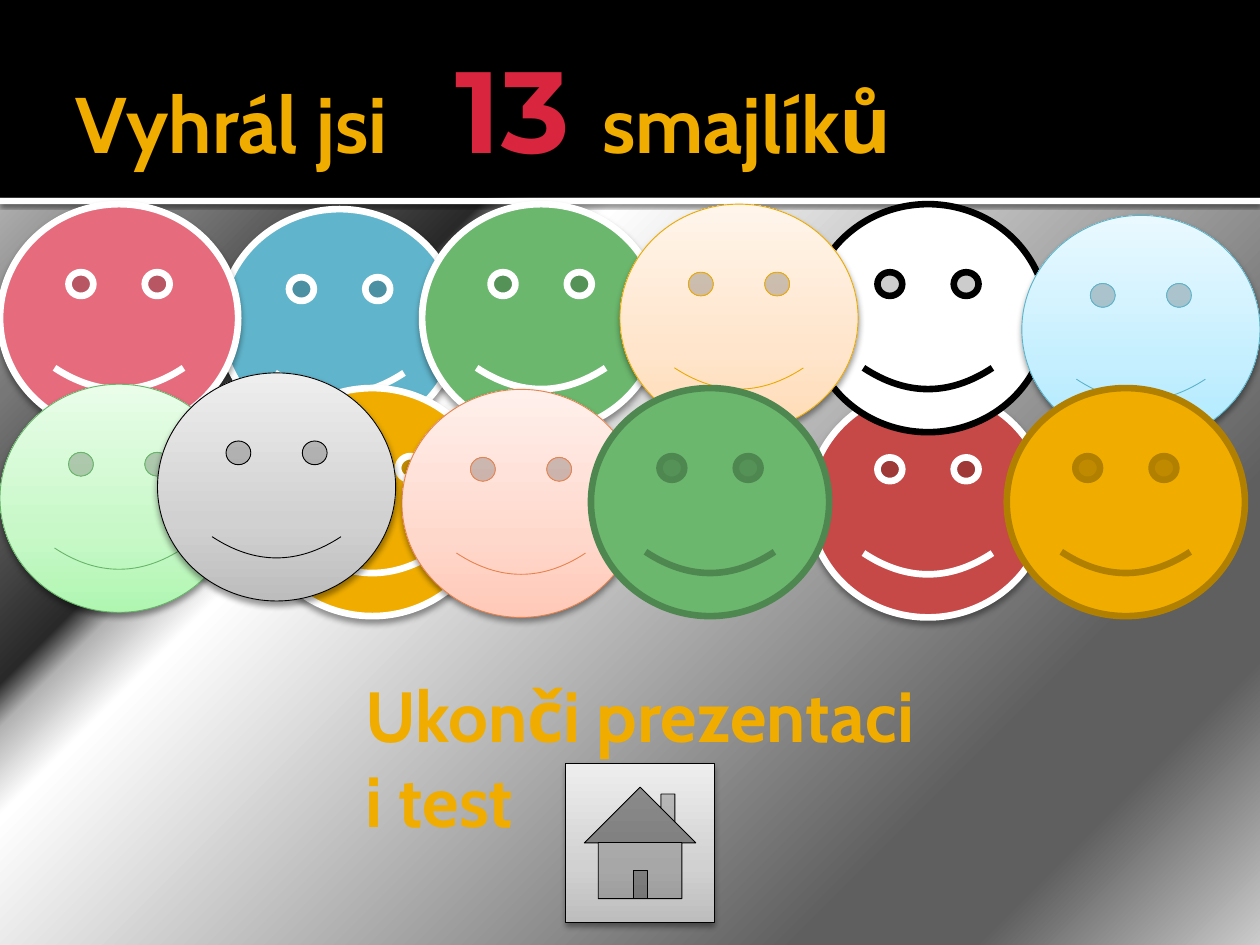
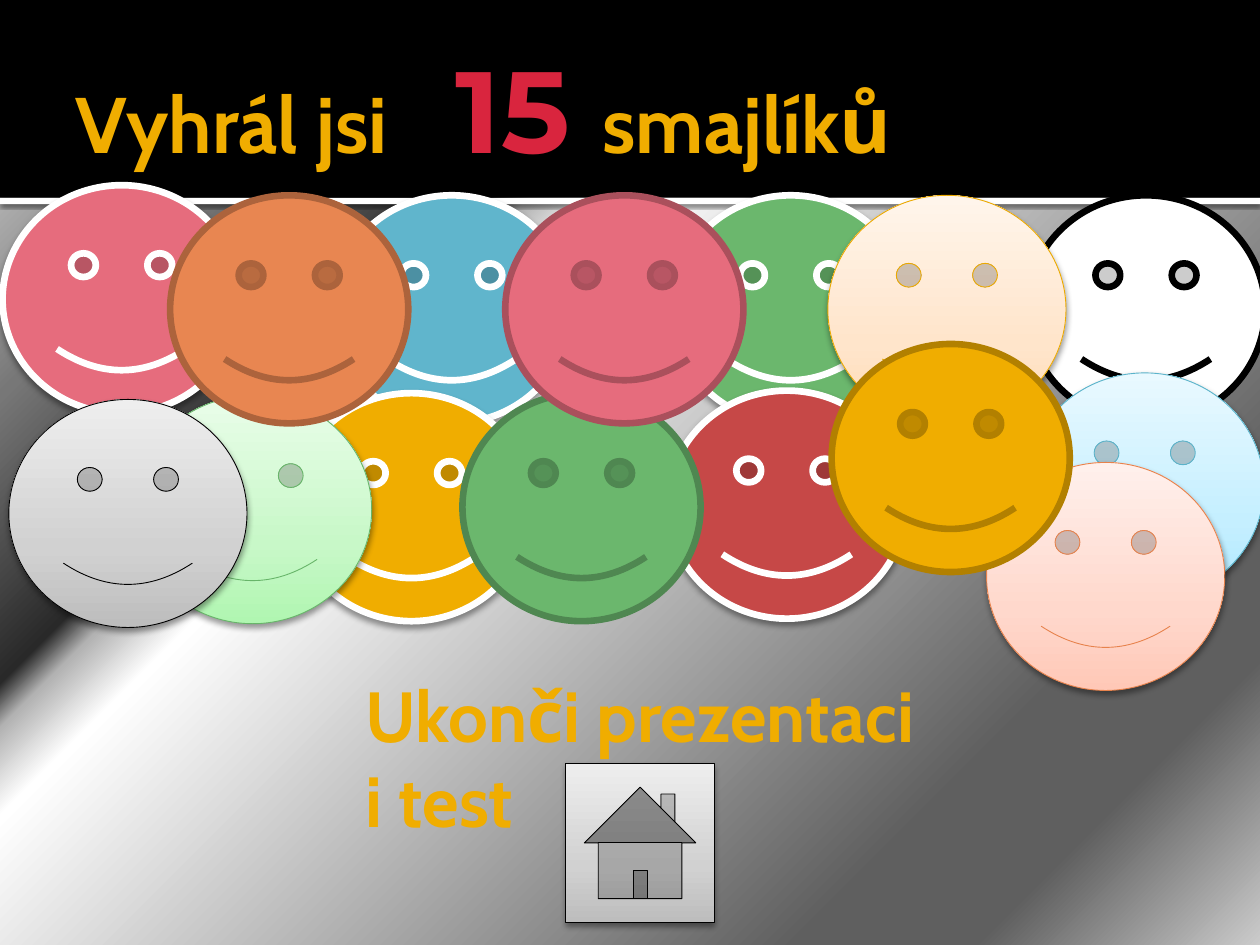
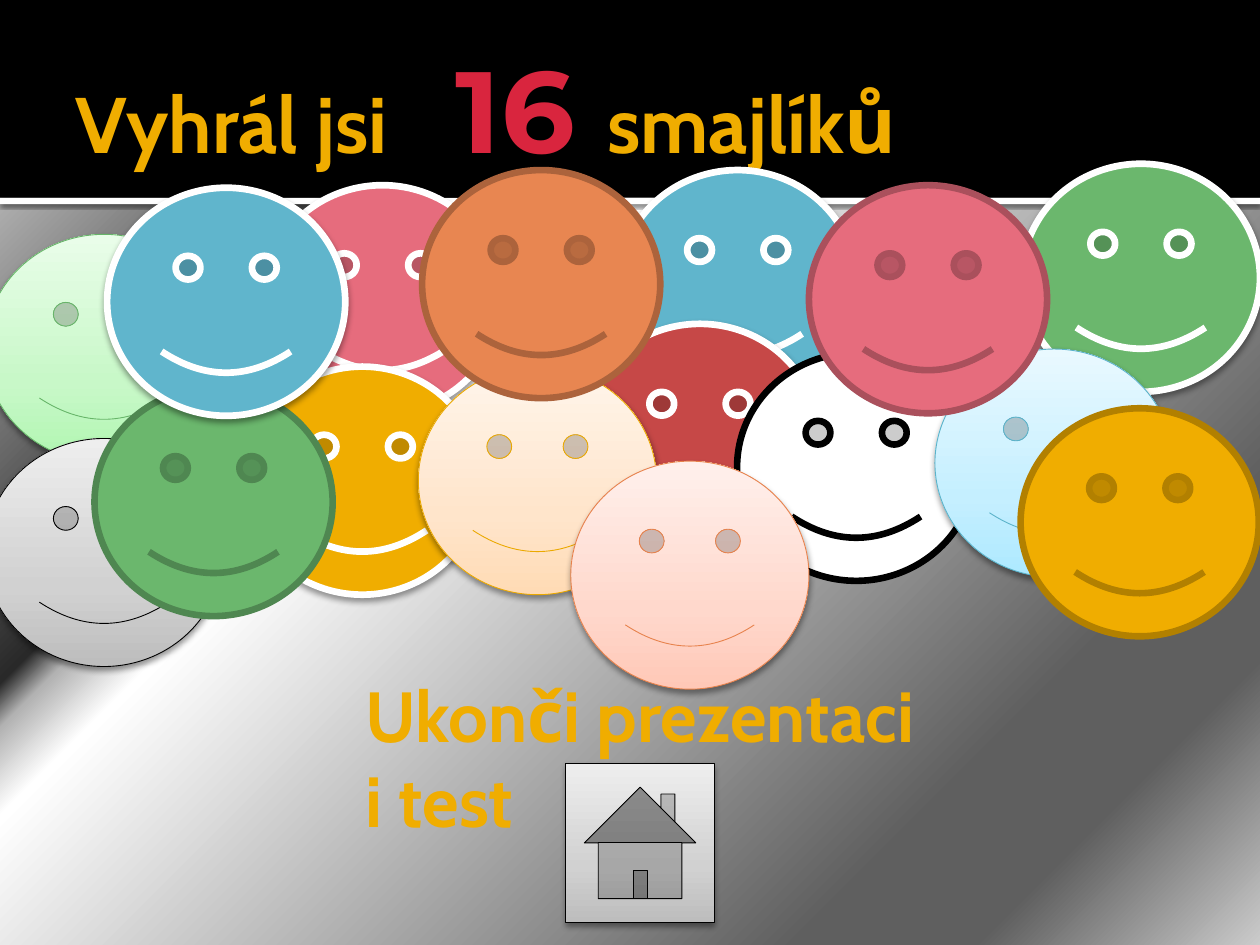
from lxml import etree
from pptx import Presentation
from pptx.dml.color import RGBColor
from pptx.enum.shapes import MSO_SHAPE
from pptx.enum.text import MSO_ANCHOR
from pptx.oxml.ns import qn
from pptx.util import Inches, Pt

RECTANGLE = MSO_SHAPE.RECTANGLE
SMILEY = MSO_SHAPE.SMILEY_FACE
HOME_BUTTON = MSO_SHAPE.ACTION_BUTTON_HOME
MIDDLE = MSO_ANCHOR.MIDDLE
BLANK_LAYOUT = 6

COLORS = {
    "black": "000000", "white": "FFFFFF", "gold": "F0AD00", "score": "D9253E",
    "blue": "60B5CC", "pink": "E66C7D", "green": "6BB76D", "red": "C64847",
    "orange": "E88651", "dark_green": "4F8751", "dark_gold": "B28000",
    "dark_pink": "AA505C", "dark_orange": "AC633C", "green_line": "67B569",
    "gold_line": "EBA900", "blue_line": "5BB3CA", "orange_line": "E7824C",
}
PALE_FILLS = {
    "pale_green": ("B0F6B1", "C8F8C8", "E9FDE9"),
    "pale_gold": ("FFDBB5", "FFE5CB", "FFF5EB"),
    "pale_blue": ("ADE9FF", "C5EFFF", "E9F9FF"),
    "pale_orange": ("FFC8B7", "FFD8CC", "FFF0EC"),
    "pale_gray": ("BDBDBD", "D1D1D1", "EEEEEE"),
}
PALE_STOPS = (0, 35, 100)
BACKGROUND_STOPS = [
    (0, "CBCBCB"), (13, "5F5F5F"), (21, "5F5F5F"), (63, "FFFFFF"),
    (67, "B2B2B2"), (69, "292929"), (82, "777777"), (100, "EAEAEA"),
]

# Opacity in percent, blur and distance in points
SOFT_SHADOW = (38, 3.5, 2)
BAND_SHADOW = (60, 2.5, 0.8)

# Fill, line colour, line width and shadow
OUTLINED = ("white", 3.82, SOFT_SHADOW)
FACES = [
    ("blue", *OUTLINED),
    ("pink", *OUTLINED),
    ("green", *OUTLINED),
    ("gold", *OUTLINED),
    ("red", *OUTLINED),
    ("white", "black", 3.78, None),
    ("pale_green", "green_line", 0.5, SOFT_SHADOW),
    ("pale_gold", "gold_line", 0.5, SOFT_SHADOW),
    ("pale_blue", "blue_line", 0.5, SOFT_SHADOW),
    ("pale_orange", "orange_line", 0.5, SOFT_SHADOW),
    ("pale_gray", "black", 0.5, SOFT_SHADOW),
    ("green", "dark_green", 3.78, None),
    ("gold", "dark_gold", 3.78, None),
    ("pink", "dark_pink", 3.78, None),
    ("orange", "dark_orange", 3.78, None),
    ("blue", *OUTLINED),
]
FACE_SIZE = (1.89, 1.81)

# Left and top of each face, in the order of FACES; their number is the score
RESULTS = [
    [(1.75, 1.66), (0, 1.62), (3.35, 1.62), (2.01, 3.08), (6.42, 3.09),
     (6.42, 1.62), (0, 3.05), (4.92, 1.62), (8.11, 1.71), (3.19, 3.09),
     (1.25, 2.96), (4.69, 3.08), (7.99, 3.08)],
    [(2.64, 1.55), (0.02, 1.47), (5.33, 1.55), (2.32, 3.12), (5.3, 3.1),
     (8.15, 1.55), (1.06, 3.14), (6.57, 1.55), (8.14, 2.96), (7.83, 3.67),
     (0.07, 3.17), (3.67, 3.12), (6.6, 2.73), (4.01, 1.55), (1.35, 1.55)],
    [(4.91, 1.35), (2.09, 1.47), (8.11, 1.3), (1.93, 2.91), (4.61, 2.57),
     (5.85, 2.8), (-0.12, 1.86), (3.32, 2.91), (7.42, 2.77), (4.53, 3.66),
     (-0.12, 3.48), (0.75, 3.08), (8.1, 3.24), (6.42, 1.47), (3.35, 1.35),
     (0.85, 1.49)],
]

PAGE_BOX = (0, 0, 10, 7.5)
HEADER_BOX = (0, 0, 10, 1.57)
EXIT_BOX = (2.8, 5.32, 4.8, 1.37)


def color(name):
    return RGBColor.from_string(COLORS[name])


def add_element(parent, tag, **attributes):
    values = {key: str(value) for key, value in attributes.items()}
    return etree.SubElement(parent, qn(tag), values)


def make_gradient(holder, stops):
    """Replace the solid fill in holder by a gradient and return it."""
    gradient = etree.Element(qn("a:gradFill"), rotWithShape="1")
    stop_list = add_element(gradient, "a:gsLst")
    for percent, value in stops:
        stop = add_element(stop_list, "a:gs", pos=percent * 1000)
        add_element(stop, "a:srgbClr", val=value)
    holder.replace(holder.find(qn("a:solidFill")), gradient)
    return gradient


def paint_background(page):
    page.background.fill.solid()
    holder = page._element.find(".//" + qn("p:bgPr"))
    gradient = make_gradient(holder, BACKGROUND_STOPS)
    circle = add_element(gradient, "a:path", path="circle")
    add_element(circle, "a:fillToRect", l=100000, t=100000)


def add_shadow(shape, opacity, blur, distance):
    effects = shape._element.spPr.find(qn("a:effectLst"))
    shadow = add_element(effects, "a:outerShdw", blurRad=Pt(blur), dist=Pt(distance),
                         dir=5400000, rotWithShape=0)
    tint = add_element(shadow, "a:srgbClr", val=COLORS["black"])
    add_element(tint, "a:alpha", val=opacity * 1000)


def add_figure(page, kind, box, fill, line=None, width=0, shadow=None):
    shape = page.shapes.add_shape(kind, *map(Inches, box))
    shape.shadow.inherit = False
    shape.fill.solid()
    if fill in PALE_FILLS:
        gradient = make_gradient(shape._element.spPr, zip(PALE_STOPS, PALE_FILLS[fill]))
        add_element(gradient, "a:lin", ang=16200000, scaled=1)
    else:
        shape.fill.fore_color.rgb = color(fill)
    if line:
        shape.line.color.rgb = color(line)
        shape.line.width = Pt(width)
    else:
        shape.line.fill.background()
    if shadow:
        add_shadow(shape, *shadow)


def add_text_box(page, box):
    """Add an empty text box and return its paragraph."""
    frame = page.shapes.add_textbox(*map(Inches, box)).text_frame
    frame.word_wrap = True
    frame.vertical_anchor = MIDDLE
    frame.margin_left = Inches(0.1)
    frame.margin_right = frame.margin_top = frame.margin_bottom = Inches(0.05)
    return frame.paragraphs[0]


def add_span(para, text, size, font="Cabin", tone="gold"):
    span = para.add_run()
    span.text = text
    span.font.size = Pt(size)
    span.font.name = font
    span.font.bold = True
    span.font.color.rgb = color(tone)


def add_header(page, box, score):
    left, top, width, height = box
    add_figure(page, RECTANGLE, (left, top + height, width, 0.05), "white",
               shadow=BAND_SHADOW)
    add_figure(page, RECTANGLE, box, "black")
    para = add_text_box(page, (left + 0.5, top + 0.17, width - 1, height - 0.2))
    tabs = add_element(para._p.get_or_add_pPr(), "a:tabLst")
    add_element(tabs, "a:tab", pos=Inches(3.02), algn="l")
    add_span(para, "Vyhrál jsi\t", 45)
    add_span(para, f"{score} ", 66, "Montserrat", "score")
    add_span(para, "smajlíků", 45)


def add_faces(page, box, places):
    left, top = box[:2]
    for (across, down), style in zip(places, FACES):
        add_figure(page, SMILEY, (left + across, top + down, *FACE_SIZE), *style)


def add_exit(page, box):
    left, top = box[:2]
    add_figure(page, HOME_BUTTON, (left + 1.69, top + 0.74, 1.18, 1.26),
               "pale_gray", "black", 0.5, SOFT_SHADOW)
    para = add_text_box(page, box)
    add_span(para, "Ukonči prezentaci", 40.5)
    para.add_line_break()
    add_span(para, "i test", 40.5)


def add_result_page(deck, places):
    page = deck.slides.add_slide(deck.slide_layouts[BLANK_LAYOUT])
    paint_background(page)
    add_header(page, HEADER_BOX, len(places))
    add_faces(page, PAGE_BOX, places)
    add_exit(page, EXIT_BOX)


def main():
    deck = Presentation()
    deck.slide_width, deck.slide_height = map(Inches, PAGE_BOX[2:])
    for places in RESULTS:
        add_result_page(deck, places)
    deck.save("out.pptx")


if __name__ == "__main__":
    main()
